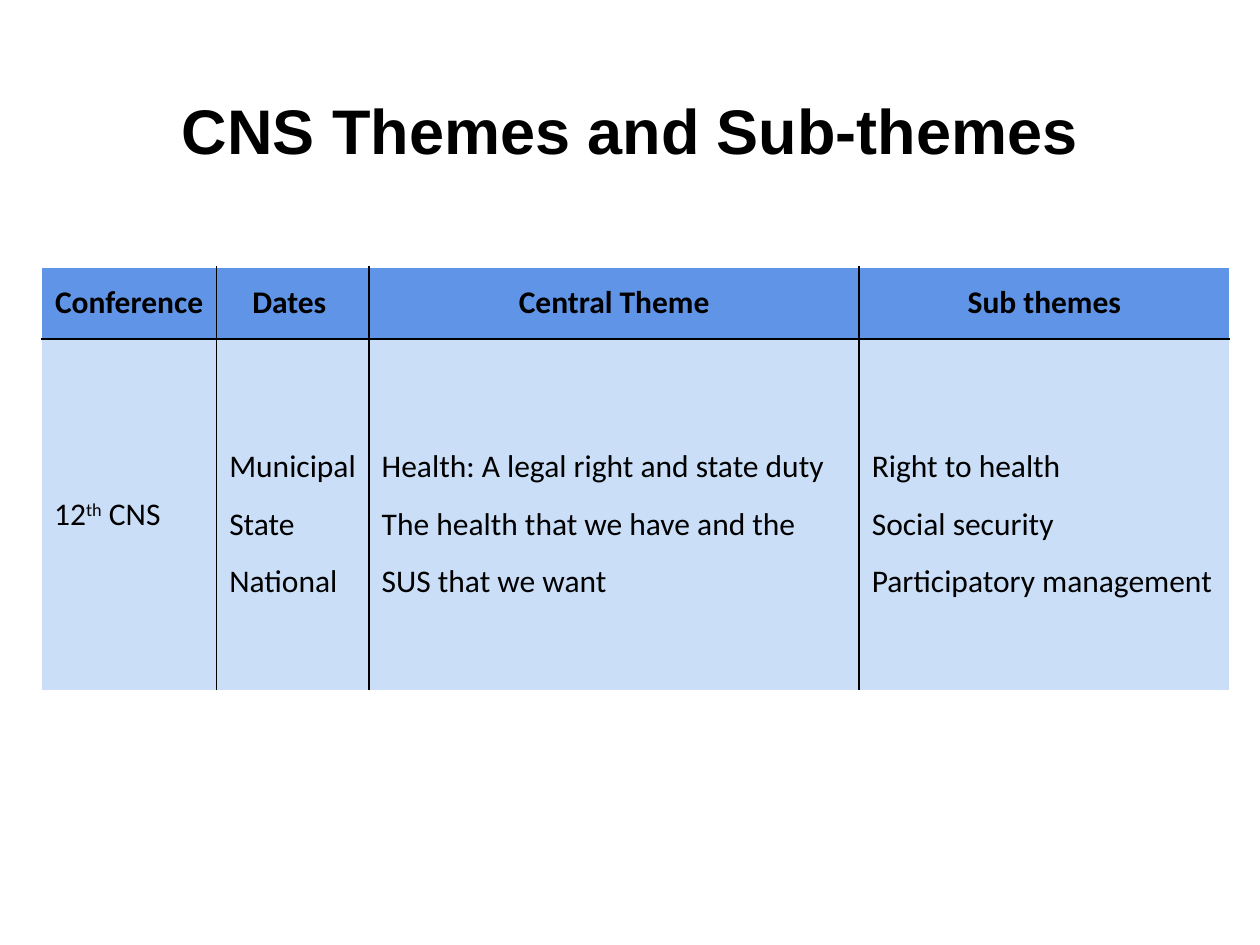
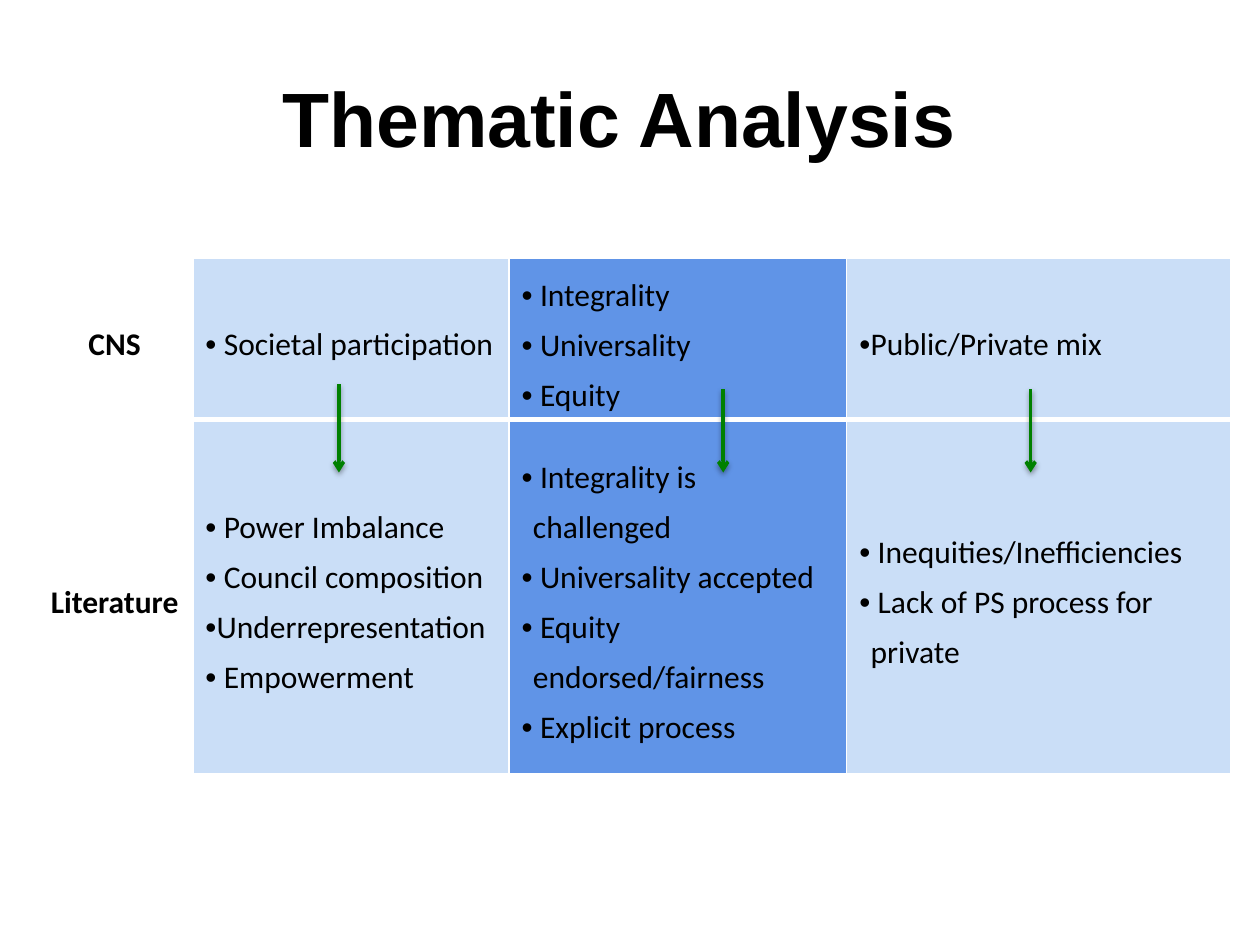
"""Build two slides on the themes of the CNS conferences and their analysis."""
from lxml.etree import SubElement
from pptx import Presentation
from pptx.dml.color import RGBColor
from pptx.enum.shapes import MSO_CONNECTOR as Connector
from pptx.enum.text import MSO_ANCHOR as Anchor, PP_ALIGN as Align
from pptx.oxml.ns import qn
from pptx.util import Inches, Pt

BLACK, WHITE, GREEN = "000000", "FFFFFF", "008000"
STRONG_BLUE, PALE_BLUE = "6094E7", "CADEF7"
TITLE_FONT, BODY_FONT, BODY_SIZE = "Arial", "Calibri", 18

THEMES = {
    "title": "CNS Themes and Sub-themes", "title_size": 36, "title_height": 1.45,
    "origin": (0.33, 2.12), "columns": (1.39, 1.21, 3.89, 2.94), "rows": (0.57, 2.79),
    "cells": [
        [["Conference"], ["Dates "], ["Central Theme"], ["Sub themes"]],
        [["12^th^ CNS"],
         ["Municipal", "State", "National"],
         ["Health: A legal right and state duty",
          "The health that we have and the SUS that we want"],
         ["Right to health", "Social security", "Participatory management"]],
    ],
    "fills": [[STRONG_BLUE] * 4, [PALE_BLUE] * 4],
    "is_heading": lambda row, column: row == 0,
    "spacing": 1.5, "bulleted": False, "inner_line": BLACK, "divider": 1,
    "arrows": [],
}
ANALYSIS = {
    "title": "Thematic Analysis ", "title_size": 44, "title_height": 1.25,
    "origin": (0.29, 2.05), "columns": (1.24, 2.51, 2.68, 3.05), "rows": (1.28, 2.81),
    "cells": [
        [["CNS"], [" Societal participation"],
         [" Integrality", " Universality", " Equity"], ["Public/Private mix"]],
        [["Literature"],
         [" Power Imbalance", " Council composition", "Underrepresentation", " Empowerment"],
         [" Integrality is challenged", " Universality accepted",
          " Equity endorsed/fairness", " Explicit process"],
         [" Inequities/Inefficiencies", " Lack of PS process for private"]],
    ],
    "fills": [[None, PALE_BLUE, STRONG_BLUE, PALE_BLUE]] * 2,
    "is_heading": lambda row, column: column == 0,
    "spacing": 1.3, "bulleted": True, "inner_line": WHITE, "divider": 3,
    "arrows": [(2.69, 3.05), (5.74, 3.09), (8.18, 3.09)],
}
ARROW_END = 3.75


def rgb(colour):
    return RGBColor.from_string(colour)


def add_run(paragraph, text, font_name, size, bold):
    run = paragraph.add_run()
    run.text = text
    run.font.name, run.font.size, run.font.bold = font_name, Pt(size), bold
    run.font.color.rgb = rgb(BLACK)
    return run


def add_title(slide, content):
    title = slide.shapes.add_textbox(
        Inches(0.5), Inches(0.3), Inches(9), Inches(content["title_height"]))
    frame = title.text_frame
    frame.word_wrap, frame.vertical_anchor = True, Anchor.MIDDLE
    frame.paragraphs[0].alignment = Align.CENTER
    add_run(frame.paragraphs[0], content["title"], TITLE_FONT, content["title_size"], True)


def add_bullet(paragraph):
    properties = paragraph._p.get_or_add_pPr()
    properties.set("marL", str(Inches(0.09)))
    properties.set("indent", str(-Inches(0.09)))
    SubElement(properties, qn("a:buFont")).set("typeface", TITLE_FONT)
    SubElement(properties, qn("a:buChar")).set("char", "•")


def write_cell(cell, lines, heading, content):
    cell.vertical_anchor = Anchor.MIDDLE
    frame = cell.text_frame
    for index, line in enumerate(lines):
        paragraph = frame.add_paragraph() if index else frame.paragraphs[0]
        paragraph.alignment = Align.CENTER if heading else Align.LEFT
        if content["bulleted"] or len(lines) > 1:
            paragraph.line_spacing = content["spacing"]
        if content["bulleted"] and not heading:
            add_bullet(paragraph)
        for part, text in enumerate(line.split("^")):
            run = add_run(paragraph, text, BODY_FONT, BODY_SIZE, heading)
            if part % 2:
                run.font._element.set("baseline", "30000")


def draw_borders(cell, row, column, content):
    last_row, last_column = len(content["rows"]) - 1, len(content["columns"]) - 1
    sides = (("a:lnL", column > 0, 1), ("a:lnR", column < last_column, 1),
             ("a:lnT", row > 0, content["divider"]),
             ("a:lnB", row < last_row, content["divider"]))
    for tag, inner, inner_width in sides:
        border = SubElement(cell._tc.get_or_add_tcPr(), qn(tag))
        border.set("w", str(Pt(inner_width if inner else 1)))
        fill = SubElement(border, qn("a:solidFill"))
        colour = content["inner_line"] if inner else WHITE
        SubElement(fill, qn("a:srgbClr")).set("val", colour)


def add_grid(slide, content):
    columns, rows = content["columns"], content["rows"]
    left, top = content["origin"]
    table = slide.shapes.add_table(
        len(rows), len(columns), Inches(left), Inches(top),
        Inches(sum(columns)), Inches(sum(rows))).table
    table.first_row = table.horz_banding = False
    for column, width in zip(table.columns, columns):
        column.width = Inches(width)
    for row, height in zip(table.rows, rows):
        row.height = Inches(height)
    for row, row_cells in enumerate(content["cells"]):
        for column, lines in enumerate(row_cells):
            cell = table.cell(row, column)
            write_cell(cell, lines, content["is_heading"](row, column), content)
            draw_borders(cell, row, column, content)
            colour = content["fills"][row][column]
            if colour:
                cell.fill.solid()
                cell.fill.fore_color.rgb = rgb(colour)
            else:
                cell.fill.background()


def add_arrow(slide, x, start):
    arrow = slide.shapes.add_connector(
        Connector.STRAIGHT, Inches(x), Inches(start), Inches(x), Inches(ARROW_END))
    arrow.line.color.rgb = rgb(GREEN)
    arrow.line.width = Pt(2)
    SubElement(arrow.line._get_or_add_ln(), qn("a:tailEnd")).set("type", "arrow")
    effects = SubElement(arrow._element.spPr, qn("a:effectLst"))
    shadow = SubElement(effects, qn("a:outerShdw"), blurRad=str(Pt(3.1)),
                        dist=str(Pt(1.6)), dir="5400000", rotWithShape="0")
    shade = SubElement(shadow, qn("a:srgbClr"), val=BLACK)
    SubElement(shade, qn("a:alpha")).set("val", "38000")


def main():
    deck = Presentation()
    deck.slide_width, deck.slide_height = Inches(10), Inches(7.5)
    for content in (THEMES, ANALYSIS):
        slide = deck.slides.add_slide(deck.slide_layouts[6])
        add_title(slide, content)
        add_grid(slide, content)
        for x, start in content["arrows"]:
            add_arrow(slide, x, start)
    deck.save("out.pptx")


if __name__ == "__main__":
    main()
